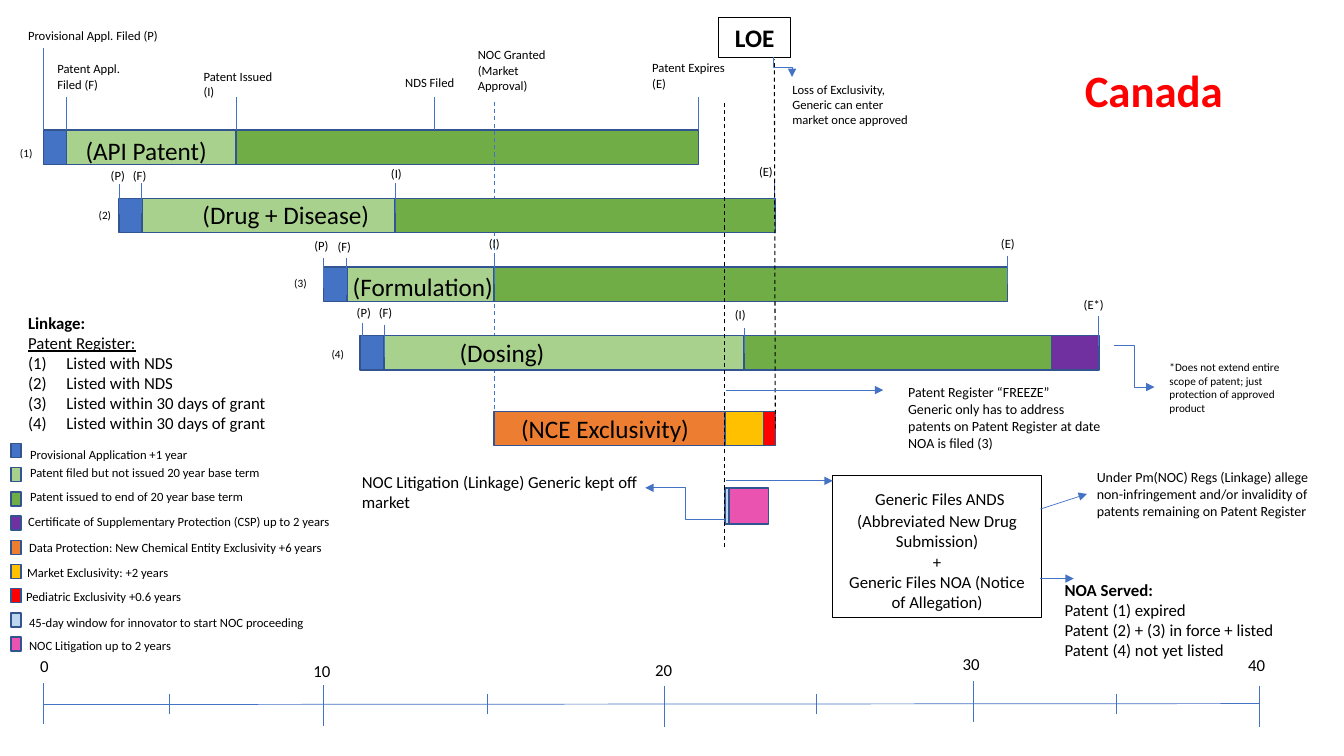
from dataclasses import dataclass
from typing import Any, Optional

from lxml import etree
from pptx import Presentation
from pptx.dml.color import RGBColor
from pptx.enum import dml, shapes, text
from pptx.oxml.ns import qn
from pptx import util as u


@dataclass(frozen=True)
class Theme:
    font: str = "Calibri"
    black: str = "000000"
    red: str = "FF0000"
    blue: str = "4472C4"
    border: str = "325491"
    light: str = "A9D18E"
    green: str = "70AD47"
    purple: str = "7030A0"
    orange: str = "ED7D31"
    gold: str = "FFC000"
    pale: str = "BDD7EE"
    pink: str = "EB53B1"
    tiny: int = 8
    small: int = 9
    note: int = 10
    body: int = 12
    large: int = 18
    title: int = 32


T = Theme()
CENTER = text.PP_ALIGN.CENTER


@dataclass(frozen=True)
class Span:
    words: str
    size: int
    bold: bool = False
    underline: bool = False
    color: str = T.black


@dataclass(frozen=True)
class Track:
    """A bar of touching segments; edges has one value more than colors."""
    top: float
    height: float
    edges: tuple[float, ...]
    colors: tuple[str, ...]
    name: str = ""
    name_at: tuple[float, float] = (0, 0)
    number: str = ""
    number_at: tuple[float, float] = (0, 0)


@dataclass(frozen=True)
class Label:
    words: str
    left: float
    top: float
    width: float = 0.37
    height: float = 0.25
    size: int = T.small


@dataclass(frozen=True)
class Key:
    words: str
    color: str
    left: float
    top: float


def inch(value: float) -> u.Length:
    return u.Cm(value * 2.54)


def assign(target: Any, values: dict[str, Any]) -> None:
    for name, value in values.items():
        setattr(target, name, value)


def write(box: Any, paragraphs: list[list[Span]], align: Any = None) -> None:
    frame = box.text_frame
    assign(frame, {"word_wrap": True, "auto_size": text.MSO_AUTO_SIZE.SHAPE_TO_FIT_TEXT,
                   "vertical_anchor": text.MSO_ANCHOR.TOP})
    for index, spans in enumerate(paragraphs):
        para = frame.paragraphs[0] if index == 0 else frame.add_paragraph()
        para.alignment = align
        for item in spans:
            span = para.add_run()
            span.text = item.words
            assign(span.font, {"name": T.font, "size": u.Pt(item.size), "bold": item.bold,
                               "underline": item.underline})
            span.font.color.rgb = RGBColor.from_string(item.color)


def add_text(page: Any, left: float, top: float, width: float, height: float,
             paragraphs: list[list[Span]]) -> Any:
    box = page.shapes.add_textbox(*map(inch, (left, top, width, height)))
    write(box, paragraphs)
    return box


def add_label(page: Any, label: Label) -> None:
    add_text(page, label.left, label.top, label.width, label.height,
             [[Span(line, label.size)] for line in label.words.split("\n")])


def add_box(page: Any, left: float, top: float, width: float, height: float,
            fill: Optional[str], line: str = T.border, weight: float = 1) -> Any:
    box = page.shapes.add_shape(shapes.MSO_SHAPE.RECTANGLE,
                                *map(inch, (left, top, width, height)))
    box.shadow.inherit = False
    if fill:
        box.fill.solid()
        box.fill.fore_color.rgb = RGBColor.from_string(fill)
    else:
        box.fill.background()
    box.line.color.rgb = RGBColor.from_string(line)
    box.line.width = u.Pt(weight)
    return box


def add_line(page: Any, x1: float, y1: float, x2: float, y2: float, color: str = T.blue,
             dashed: bool = False, arrow: bool = False, bent: bool = False) -> Any:
    kind = shapes.MSO_CONNECTOR.ELBOW if bent else shapes.MSO_CONNECTOR.STRAIGHT
    line = page.shapes.add_connector(kind, *map(inch, (x1, y1, x2, y2)))
    line.line.color.rgb = RGBColor.from_string(color)
    line.line.width = u.Pt(0.75 if dashed else 0.5)
    properties = line._element.spPr
    if dashed:
        line.line.dash_style = dml.MSO_LINE.DASH
    if arrow:
        etree.SubElement(properties.find(qn("a:ln")), qn("a:tailEnd"), type="triangle")
    etree.SubElement(properties, qn("a:effectLst"))
    return line


def add_track(page: Any, track: Track) -> list[Any]:
    return [add_box(page, left, track.top, right - left, track.height, color)
            for left, right, color in zip(track.edges, track.edges[1:], track.colors)]


PATENT = (T.blue, T.light, T.green)
ROW_TOPS = [1.29 + 0.68 * row for row in range(4)]
TRACKS = [
    Track(ROW_TOPS[0], 0.34, (0.43, 0.66, 2.34, 6.93), PATENT,
          "(API Patent)", (0.75, 1.29), "(1)", (0.1, 1.4)),
    Track(ROW_TOPS[1], 0.34, (1.18, 1.41, 3.92, 7.69), PATENT,
          "(Drug + Disease)", (1.91, 1.93), "(2)", (0.88, 2.02)),
    Track(ROW_TOPS[2], 0.34, (3.21, 3.44, 4.9, 9.99), PATENT,
          "(Formulation)", (3.4, 2.64), "(3)", (2.82, 2.69)),
    Track(ROW_TOPS[3], 0.34, (3.57, 3.81, 7.38, 10.43, 10.9), PATENT + (T.purple,),
          "(Dosing)", (4.46, 3.3), "(4)", (3.19, 3.4)),
    Track(4.08, 0.34, (4.9, 7.19, 7.57, 7.69), (T.orange, T.gold, T.red),
          "(NCE Exclusivity)", (5.07, 4.05)),
    Track(4.84, 0.36, (7.19, 7.23, 7.62), (T.pale, T.pink)),
]
LABELS = [
    Label("Provisional Appl. Filed (P)", 0.18, 0.23, 1.74),
    Label("Patent Appl. Filed (F)", 0.47, 0.56, 0.92, 0.4),
    Label("Patent Issued (I)", 1.92, 0.63, 0.92, 0.4),
    Label("NDS Filed", 3.92, 0.69, 0.92),
    Label("NOC Granted\n(Market Approval)", 4.64, 0.42, 0.92, 0.56),
    Label("Patent Expires (E)", 6.37, 0.55, 0.92, 0.4),
    Label("(P)", 1, 1.62), Label("(F)", 1.22, 1.62), Label("(I)", 3.78, 1.6),
    Label("(E)", 7.43, 1.58, 0.4),
    Label("(P)", 3.02, 2.31), Label("(F)", 3.25, 2.32), Label("(I)", 4.75, 2.29),
    Label("(E)", 9.83, 2.29, 0.4),
    Label("(P)", 3.44, 2.98), Label("(F)", 3.66, 2.98), Label("(I)", 7.19, 3),
    Label("(E*)", 10.65, 2.9, 0.55),
    Label("Loss of Exclusivity, Generic can enter market once approved", 7.76, 0.76, 1.48, 0.56),
    Label("*Does not extend entire scope of patent; just protection of approved product",
          11.5, 3.53, 1.32, 0.64, T.tiny),
    Label("NOC Litigation (Linkage) Generic kept off market", 3.49, 4.63, 3.35, 0.5, T.body),
    Label("Under Pm(NOC) Regs (Linkage) allege non-infringement and/or invalidity of "
          "patents remaining on Patent Register", 10.78, 4.6, 2.44, 0.61, T.note),
    Label("Patent Register “FREEZE”\nGeneric only has to address patents on Patent Register "
          "at date NOA is filed (3)", 8.91, 3.76, 2.14, 0.77, T.note),
]
DATE_MARKS = [  # x, top, bottom
    (0.43, 0.48, 1.29), (0.66, 0.96, 1.29), (2.34, 0.96, 1.29), (4.31, 0.96, 1.29),
    (6.93, 0.96, 1.29), (1.18, 1.83, 2.12), (1.4, 1.82, 2.11), (3.92, 1.82, 2.11),
    (7.68, 1.79, 2.09), (3.21, 2.56, 2.86), (3.44, 2.56, 2.93), (3.59, 3.2, 3.49),
    (3.75, 3.37, 3.65), (3.81, 3.22, 3.54), (10.89, 3.14, 3.43),
]
KEYS = [
    Key("Provisional Application +1 year", T.blue, 0.2, 4.38),
    Key("Patent filed but not issued 20 year base term", T.light, 0.2, 4.56),
    Key("Patent issued to end of 20 year base term", T.green, 0.2, 4.8),
    Key("Certificate of Supplementary Protection (CSP) up to 2 years", T.purple, 0.18, 5.05),
    Key("Data Protection: New Chemical Entity Exclusivity +6 years", T.orange, 0.19, 5.31),
    Key("Market Exclusivity: +2 years", T.gold, 0.17, 5.55),
    Key("Pediatric Exclusivity +0.6 years", T.red, 0.16, 5.79),
    Key("45-day window for innovator to start NOC proceeding", T.pale, 0.19, 6.05),
    Key("NOC Litigation up to 2 years", T.pink, 0.19, 6.28),
]
YEARS = [  # words, tick x, tick top, label left, label top
    ("0", 0.43, 6.78, 0.3, 6.46), ("10", 3.21, 6.8, 3.01, 6.51), ("20", 6.59, 6.81, 6.4, 6.5),
    ("30", 9.65, 6.76, 9.45, 6.44), ("40", 12.49, 6.81, 12.28, 6.45),
]


def draw_tracks(page: Any) -> None:
    add_track(page, TRACKS[0])
    add_line(page, 4.9, 4.42, 4.9, 0.99, dashed=True)
    drug, formulation, dosing, exclusivity, litigation = [
        add_track(page, track) for track in TRACKS[1:]]
    for x, top, bottom in DATE_MARKS:
        add_line(page, x, top, x, bottom)
    for x, top, bar, side in ((4.9, 2.51, formulation[2], 1), (9.99, 2.54, formulation[2], 3),
                              (7.38, 3.25, dosing[2], 1)):
        add_line(page, x, top, x, top + 0.3).end_connect(bar, side)
    for track in TRACKS:
        if track.name:
            add_label(page, Label(track.name, *track.name_at, 2.1, 0.4, T.large))
        if track.number:
            add_label(page, Label(track.number, *track.number_at, 0.4, 0.24, T.tiny))
    add_line(page, 7.68, 4.25, 7.68, 0.59, T.black, dashed=True).begin_connect(exclusivity[2], 3)
    add_line(page, 7.19, 5.43, 7.19, 0.99, T.black, dashed=True)


def draw_notes(page: Any) -> None:
    for label in LABELS:
        add_label(page, label)
    loe = add_box(page, 7.13, 0.17, 0.71, 0.4, None, T.black, 0.75)
    write(loe, [[Span("LOE", T.large, bold=True)]], CENTER)
    filing = add_box(page, 8.26, 4.72, 2.07, 1.41, None, T.black, 0.75)
    write(filing, [[Span(" ", T.large),
                    Span("Generic Files ANDS (Abbreviated New Drug Submission)", T.body)],
                   [Span("+", T.body)],
                   [Span("Generic Files NOA (Notice of Allegation)", T.body)]], CENTER)
    linkage = add_text(page, 0.18, 3.05, 3.41, 1.31, [
        [Span("Linkage:", T.body, bold=True)], [Span("Patent Register:", T.body, underline=True)],
        *[[Span(f"Listed {when}", T.body)]
          for when in ["with NDS"] * 2 + ["within 30 days of grant"] * 2]])
    for para in linkage.text_frame.paragraphs[2:]:
        properties = para._p.get_or_add_pPr()
        properties.set("marL", str(inch(0.38)))
        properties.set("indent", str(-inch(0.38)))
        etree.SubElement(properties, qn("a:buAutoNum"), type="arabicParenBoth")
    served = ["Patent (1) expired", "Patent (2) + (3) in force + listed", "Patent (4) not yet listed"]
    add_text(page, 10.46, 5.7, 2.4, 0.91, [[Span("NOA Served:", T.body, bold=True)],
                                           *[[Span(line, T.body)] for line in served]])
    # Arrows
    for ends in ((7.2, 4.77, 8.26, 4.77), (10.32, 5.05, 10.78, 4.9),
                 (7.2, 3.87, 8.76, 3.87), (10.32, 5.74, 10.65, 5.74)):
        add_line(page, *ends, arrow=True)
    for ends in ((11.05, 3.43, 11.45, 3.84), (7.19, 5.15, 6.4, 4.84)):
        add_line(page, *ends, arrow=True, bent=True)
    loss = add_line(page, 7.86, 0.57, 7.66, 0.76, arrow=True, bent=True)
    loss._element.spPr.find(qn("a:xfrm")).set("rot", str(270 * 60000))


def draw_legend_and_axis(page: Any) -> None:
    # Legend
    for row, key in enumerate(KEYS):
        add_box(page, 0.11, 4.4 + 0.24 * row, 0.1, 0.14, key.color)
        add_label(page, Label(key.words, key.left, key.top, 3.32))
    # Year axis
    add_line(page, 0.43, 6.99, 12.49, 6.98)
    for words, x, top, left, label_top in YEARS:
        add_line(page, x, top, x, top + 0.4)
        add_label(page, Label(words, left, label_top, 0.53, 0.3, T.body))
    for x in (1.68, 4.83, 8.1, 11.07):
        add_line(page, x, 6.89, x, 7.08)


def main() -> None:
    deck = Presentation()
    assign(deck, {"slide_width": inch(13.33), "slide_height": inch(7.5)})
    page = deck.slides.add_slide(deck.slide_layouts[5])
    title = page.shapes.title
    assign(title, {"left": inch(9.83), "top": inch(0.57), "width": inch(3.23), "height": inch(0.64)})
    write(title, [[Span("Canada", T.title, bold=True, color=T.red)]], CENTER)
    draw_tracks(page)
    draw_notes(page)
    draw_legend_and_axis(page)
    deck.save("out.pptx")


if __name__ == "__main__":
    main()
